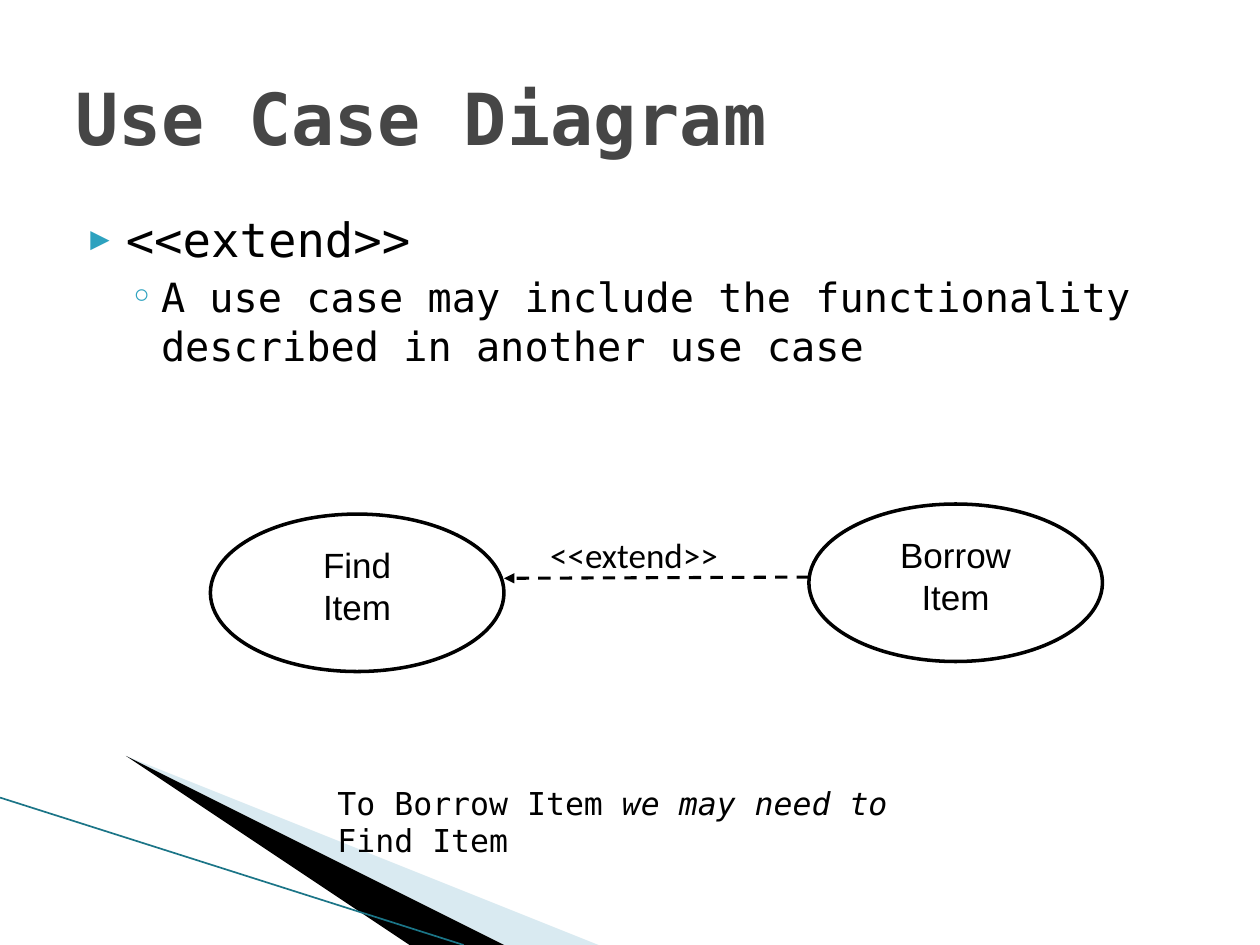
from lxml import etree
from pptx import Presentation
from pptx.dml.color import RGBColor
from pptx.enum.dml import MSO_LINE
from pptx.enum.shapes import MSO_CONNECTOR, MSO_SHAPE
from pptx.enum.text import MSO_ANCHOR, PP_ALIGN
from pptx.oxml.ns import qn
from pptx.util import Inches, Pt

TOP, MIDDLE = MSO_ANCHOR.TOP, MSO_ANCHOR.MIDDLE
LEFT, CENTER = PP_ALIGN.LEFT, PP_ALIGN.CENTER
DASH, STRAIGHT = MSO_LINE.DASH, MSO_CONNECTOR.STRAIGHT
OVAL, LABEL = MSO_SHAPE.OVAL, MSO_SHAPE.FLOWCHART_ALTERNATE_PROCESS

BLACK = RGBColor(0, 0, 0)
WHITE = RGBColor(255, 255, 255)
GREY = RGBColor(0x46, 0x46, 0x46)
TEAL = RGBColor(0x2D, 0xA2, 0xBF)
DARK_TEAL = RGBColor(0x1B, 0x75, 0x87)
PALE_BLUE = RGBColor(0xA0, 0xCB, 0xDC)
MONO = "DejaVu Sans Mono"

WIDTH, HEIGHT = 10, 7.5
MARGIN = WIDTH / 20
CONTENT = WIDTH - 2 * MARGIN
OVAL_SIZE = (2.33, 1.25)

TITLE = "Use Case Diagram"
BULLETS = [
    {"text": "<<extend>>", "size": 27, "mark": "▶", "scale": 68,
     "margin": 0.4, "indent": -0.28, "before": 4},
    {"text": "A use case may include the functionality described in another use case",
     "size": 23, "mark": "◦", "scale": 100,
     "margin": 0.68, "indent": -0.25, "before": 3.2},
]
USE_CASES = [("Borrow\nItem", 6.42, 4), ("Find\nItem", 1.67, 4.08)]
RELATION = "<<extend>>"
NOTE = [("To Borrow Item ", False), ("we may need to ", True), ("Find Item", False)]
WEDGES = [
    ([(0.55, 6.5), (5.9, 7.5), (4.56, 7.5)], PALE_BLUE, 40),
    ([(0.53, 6.49), (4.54, 7.5), (3.68, 7.5)], BLACK, 100),
]


def add_element(parent, tag, **attributes):
    return etree.SubElement(parent, qn(tag), attributes)


def add_text(para, text, **formats):
    color = formats.pop("color", BLACK)
    for number, line in enumerate(text.split("\n")):
        if number:
            para.add_line_break()
        span = para.add_run()
        span.text = line
        for name, value in formats.items():
            setattr(span.font, name, value)
        span.font.color.rgb = color


def add_box(page, left, top, width, height, anchor=TOP):
    box = page.shapes.add_textbox(*map(Inches, (left, top, width, height)))
    box.text_frame.word_wrap = True
    box.text_frame.vertical_anchor = anchor
    return box.text_frame


def add_node(page, kind, place, text, font, align):
    shape = page.shapes.add_shape(kind, *map(Inches, place))
    shape.shadow.inherit = False
    shape.text_frame.vertical_anchor = TOP
    para = shape.text_frame.paragraphs[0]
    para.alignment = align
    para.space_after = Pt(10)
    add_text(para, text, name=font, size=Pt(20))
    return shape


def add_line(page, start, end, color, width):
    line = page.shapes.add_connector(STRAIGHT, *map(Inches, start + end))
    line.line.color.rgb = color
    line.line.width = Pt(width)
    add_element(line._element.spPr, "a:effectLst")
    return line


def add_wedge(page, points, color, opacity):
    builder = page.shapes.build_freeform(*points[0], scale=Inches(1))
    builder.add_line_segments(points[1:])
    wedge = builder.convert_to_shape()
    wedge.shadow.inherit = False
    wedge.line.fill.background()
    wedge.fill.solid()
    wedge.fill.fore_color.rgb = color
    if opacity < 100:
        tint = wedge._element.spPr.find(".//" + qn("a:srgbClr"))
        add_element(tint, "a:alpha", val=str(opacity * 1000))


def add_bullet(para, item):
    para.space_before = Pt(item["before"])
    props = para._p.get_or_add_pPr()
    props.set("marL", str(Inches(item["margin"])))
    props.set("indent", str(Inches(item["indent"])))
    add_element(add_element(props, "a:buClr"), "a:srgbClr", val=str(TEAL))
    add_element(props, "a:buSzPct", val=str(item["scale"] * 1000))
    add_element(props, "a:buFont", typeface=MONO)
    add_element(props, "a:buChar", char=item["mark"])
    add_text(para, item["text"], name=MONO, size=Pt(item["size"]))


def main():
    deck = Presentation()
    deck.slide_width, deck.slide_height = Inches(WIDTH), Inches(HEIGHT)
    page = deck.slides.add_slide(deck.slide_layouts[6])

    for wedge in WEDGES:
        add_wedge(page, *wedge)
    add_line(page, (0, 6.33), (3.68, HEIGHT), DARK_TEAL, 0.95)

    body = add_box(page, MARGIN, 1.62, CONTENT, 4.95)
    for number, item in enumerate(BULLETS):
        para = body.add_paragraph() if number else body.paragraphs[0]
        add_bullet(para, {**item, "before": item["before"] if number else 0})

    title = add_box(page, MARGIN, 0.3, CONTENT, 1.25, MIDDLE)
    add_text(title.paragraphs[0], TITLE, name=MONO, size=Pt(41), bold=True, color=GREY)

    for text, left, top in USE_CASES:
        oval = add_node(page, OVAL, (left, top, *OVAL_SIZE), text, "Arial", CENTER)
        oval.fill.solid()
        oval.fill.fore_color.rgb = WHITE
        oval.line.color.rgb = BLACK
        oval.line.width = Pt(2)

    arrow = add_line(page, (6.42, 4.58), (4, 4.59), BLACK, 1.75)
    arrow.line.dash_style = DASH
    add_element(arrow.line._get_or_add_ln(), "a:tailEnd", type="triangle")

    label = add_node(page, LABEL, (4.25, 4.17, 1.92, 0.37), RELATION, "Calibri", LEFT)
    label.fill.background()
    label.line.fill.background()

    note = add_box(page, 2.58, 6.17, 5.31, 0.4)
    for text, italic in NOTE:
        add_text(note.paragraphs[0], text, name=MONO, size=Pt(18), italic=italic)

    deck.save("out.pptx")


if __name__ == "__main__":
    main()
